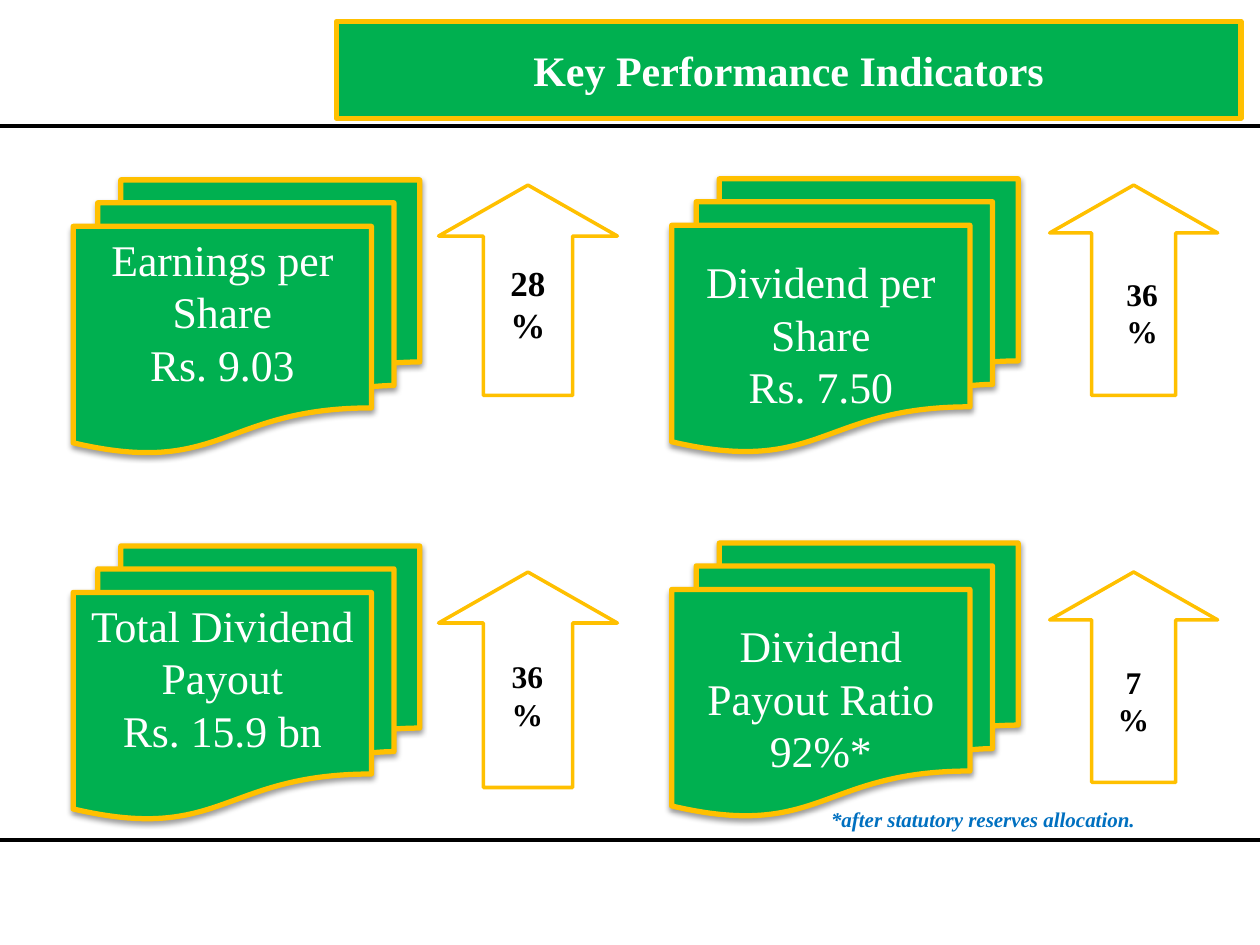
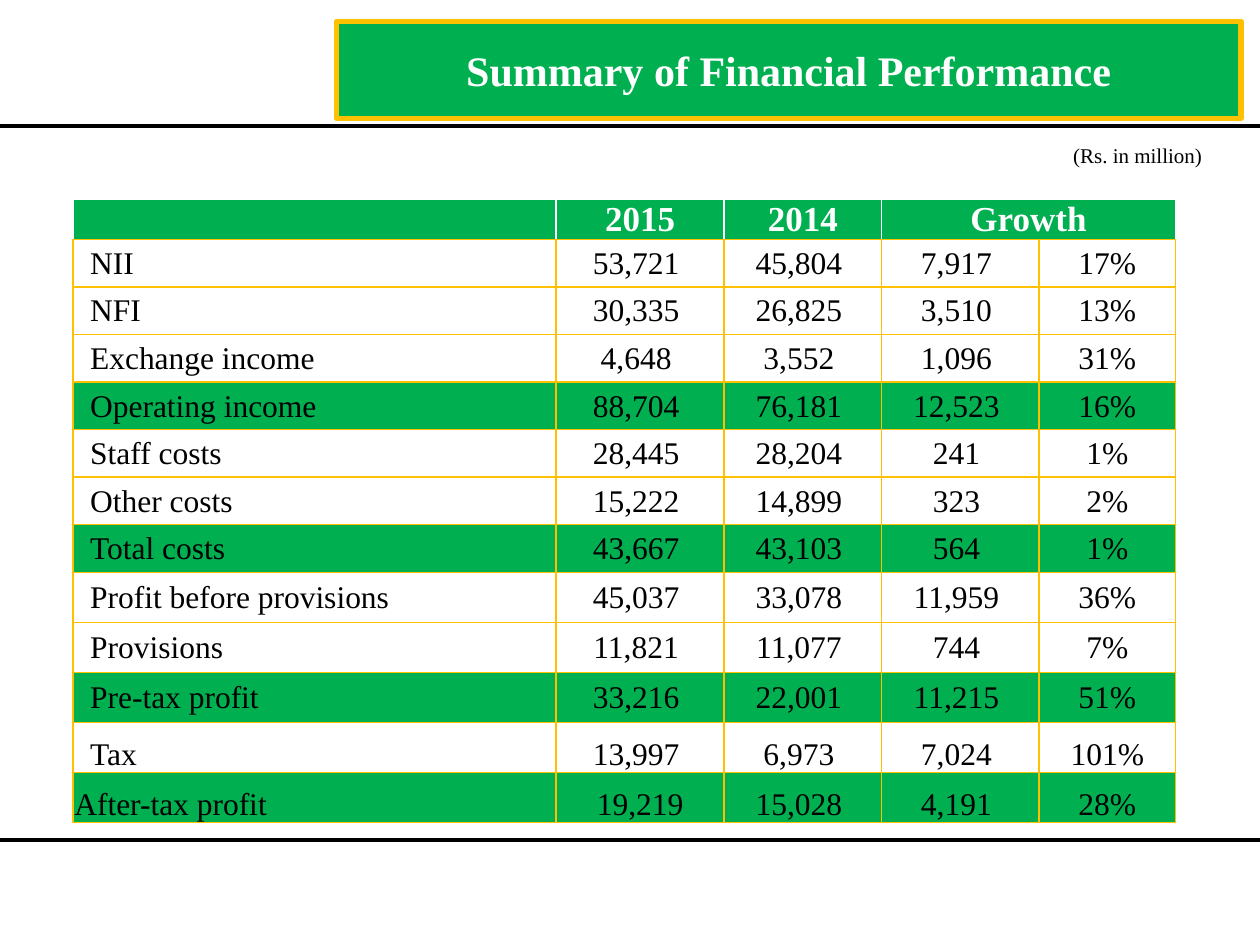
from dataclasses import dataclass
from typing import Any, Optional

from lxml.etree import SubElement
from pptx import Presentation
from pptx.dml.color import RGBColor
from pptx.enum.shapes import MSO_CONNECTOR as Connector, MSO_SHAPE as Shape
from pptx.enum.text import MSO_ANCHOR as Anchor, MSO_AUTO_SIZE as AutoSize, PP_ALIGN as Align
from pptx.oxml.ns import qn
from pptx.util import Pt

# Shared look
GREEN = RGBColor(0x00, 0xB0, 0x50)
GOLD = RGBColor(0xFF, 0xC0, 0x00)
WHITE = RGBColor(0xFF, 0xFF, 0xFF)
BLACK = RGBColor(0x00, 0x00, 0x00)
BLUE = RGBColor(0x00, 0x70, 0xC0)
FONT = "Times New Roman"
SLIDE_WIDTH, SLIDE_HEIGHT = 720, 540
RULE_HEIGHTS = (72, 480)
TITLE_BOX = (192.2, 12.2, 517, 55.4)
TITLE_ONLY = 5


@dataclass
class Box:
    left: float
    top: float
    width: float
    height: float

    def points(self) -> tuple:
        return tuple(Pt(v) for v in (self.left, self.top, self.width, self.height))


@dataclass
class Indicator:
    name: str
    value: str
    growth: str
    card: Box
    arrow: Box
    anchor: Any
    growth_box: Optional[Box] = None  # growth sits in the arrow when absent


@dataclass
class Row:
    label: str
    figures: tuple
    total: bool = False
    anchor: Any = Anchor.MIDDLE


LEFT_CARD, RIGHT_CARD, CARD_SIZE = 41.8, 383.8, (198, 156.2)
LEFT_ARROW, RIGHT_ARROW = 250.6, 599.8
TOP_ARROW, BOTTOM_ARROW = 105.8, 326.9

INDICATORS = [
    Indicator("Earnings per Share", "Rs. 9.03", "28%", Box(LEFT_CARD, 102.8, *CARD_SIZE),
              Box(LEFT_ARROW, TOP_ARROW, 102.2, 120.2), Anchor.TOP),
    Indicator("Dividend per Share", "Rs. 7.50", "36%", Box(RIGHT_CARD, 102.2, *CARD_SIZE),
              Box(RIGHT_ARROW, TOP_ARROW, 96, 120.2), Anchor.MIDDLE,
              Box(629.3, 153.4, 46.8, 28.8)),
    Indicator("Total Dividend Payout", "Rs. 15.9 bn", "36%", Box(LEFT_CARD, 312, *CARD_SIZE),
              Box(LEFT_ARROW, BOTTOM_ARROW, 102.2, 123.1), Anchor.TOP,
              Box(277.9, 372.2, 46.8, 28.8)),
    Indicator("Dividend Payout Ratio", "92%*", "7%", Box(RIGHT_CARD, 310.3, *CARD_SIZE),
              Box(RIGHT_ARROW, BOTTOM_ARROW, 96, 120.2), Anchor.MIDDLE,
              Box(628.6, 375.1, 38.2, 28.8)),
]

HEADINGS = ("", "2015", "2014", "Growth", "")
ROWS = [
    Row("NII", ("53,721", "45,804", "7,917", "17%")),
    Row("NFI", ("30,335", "26,825", "3,510", "13%")),
    Row("Exchange income", ("4,648", "3,552", "1,096", "31%")),
    Row("Operating income", ("88,704", "76,181", "12,523", "16%"), total=True),
    Row("Staff costs", ("28,445", "28,204", "241", "1%")),
    Row("Other costs", ("15,222", "14,899", "323", "2%")),
    Row("Total costs", ("43,667", "43,103", "564", "1%"), total=True),
    Row("Profit before provisions", ("45,037", "33,078", "11,959", "36%")),
    Row("Provisions", ("11,821", "11,077", "744", "7%")),
    Row("Pre-tax profit", ("33,216", "22,001", "11,215", "51%"), total=True),
    Row("Tax", ("13,997", "6,973", "7,024", "101%"), anchor=Anchor.BOTTOM),
    Row("After-tax profit", ("19,219", "15,028", "4,191", "28%"), True, Anchor.BOTTOM),
]
COLUMN_WIDTHS = (276, 96, 90, 90, 78)
ROW_HEIGHTS = (21, *[27.2] * 7, *[28.6] * 5)


def apply(target: Any, formats: dict) -> None:
    for key, value in formats.items():
        setattr(target, key, value)


def write(frame: Any, lines: list, size: float, color: RGBColor, align: Any = Align.CENTER,
          **font_formats: Any) -> None:
    frame.text = "\n".join(lines)
    for paragraph in frame.paragraphs:
        paragraph.alignment = align
        apply(paragraph.font, {"name": FONT, "size": Pt(size), **font_formats})
        paragraph.font.color.rgb = color


def outline(shape: Any, width: float, filled: bool = True) -> None:
    if filled:
        shape.fill.solid()
        shape.fill.fore_color.rgb = GREEN
    else:
        shape.fill.background()
    shape.line.color.rgb = GOLD
    shape.line.width = Pt(width)


def add_text(slide: Any, box: Box, text: str, size: float, color: RGBColor,
             anchor: Any = Anchor.TOP, **formats: Any) -> None:
    frame = slide.shapes.add_textbox(*box.points()).text_frame
    apply(frame, {"word_wrap": True, "vertical_anchor": anchor})
    write(frame, [text], size, color, **formats)


def add_shadow(shape: Any) -> None:
    effects = SubElement(shape._element.spPr, qn("a:effectLst"))
    shadow = SubElement(effects, qn("a:outerShdw"), blurRad=str(Pt(3.1)), dist=str(Pt(1.6)),
                        dir="5400000", rotWithShape="0")
    tint = SubElement(shadow, qn("a:srgbClr"), val=str(BLACK))
    SubElement(tint, qn("a:alpha"), val="38000")


def add_framed_slide(deck: Any, heading: str) -> Any:
    slide = deck.slides.add_slide(deck.slide_layouts[TITLE_ONLY])
    # Black rules above and below the content
    for height in RULE_HEIGHTS:
        rule = slide.shapes.add_connector(Connector.STRAIGHT, 0, Pt(height),
                                          Pt(SLIDE_WIDTH), Pt(height))
        rule.line.color.rgb = BLACK
        rule.line.width = Pt(2.5)
        SubElement(rule._element.spPr, qn("a:effectLst"))
    # Title band
    title = slide.shapes.title
    apply(title, dict(zip(("left", "top", "width", "height"), Box(*TITLE_BOX).points())))
    outline(title, 3)
    apply(title.text_frame, {"vertical_anchor": Anchor.MIDDLE, "auto_size": AutoSize.NONE})
    write(title.text_frame, [heading], 24, WHITE, bold=True)
    return slide


def add_indicator(slide: Any, item: Indicator) -> None:
    card = slide.shapes.add_shape(Shape.FLOWCHART_MULTIDOCUMENT, *item.card.points())
    outline(card, 3)
    add_shadow(card)
    card.text_frame.vertical_anchor = item.anchor
    write(card.text_frame, [item.name, item.value], 25, WHITE)

    arrow = slide.shapes.add_shape(Shape.UP_ARROW, *item.arrow.points())
    arrow.adjustments[1] = 0.285
    arrow.shadow.inherit = False
    outline(arrow, 2, filled=False)
    if item.growth_box:
        add_text(slide, item.growth_box, item.growth, 18, BLACK, bold=True)
    else:
        arrow.text_frame.vertical_anchor = Anchor.MIDDLE
        write(arrow.text_frame, [item.growth], 20, BLACK, bold=True)


def border_cell(cell: Any, colors: dict) -> None:
    properties = cell._tc.get_or_add_tcPr()
    for position, (side, color) in enumerate(colors.items()):
        line = properties.makeelement(qn(f"a:{side}"), {"w": str(Pt(1))})
        fill = SubElement(line, qn("a:solidFill"))
        SubElement(fill, qn("a:srgbClr"), val=str(color))
        properties.insert(position, line)


def format_cell(cell: Any, green: bool, anchor: Any, left: float, right: float,
                edge: RGBColor) -> None:
    apply(cell, {"vertical_anchor": anchor, "margin_left": Pt(left), "margin_right": Pt(right),
                 "margin_top": Pt(0.7), "margin_bottom": 0})
    if green:
        cell.fill.solid()
        cell.fill.fore_color.rgb = GREEN
    else:
        cell.fill.background()
    border_cell(cell, {"lnL": edge, "lnR": edge, "lnT": edge, "lnB": GOLD})


def add_results_table(slide: Any) -> None:
    box = Box(41.8, 113.8, sum(COLUMN_WIDTHS), sum(ROW_HEIGHTS))
    table = slide.shapes.add_table(len(ROW_HEIGHTS), len(COLUMN_WIDTHS), *box.points()).table
    apply(table, {"first_row": False, "horz_banding": False})
    for column, width in zip(table.columns, COLUMN_WIDTHS):
        column.width = Pt(width)
    for line, height in zip(table.rows, ROW_HEIGHTS):
        line.height = Pt(height)

    # Header, with Growth over the last two columns
    table.cell(0, 3).merge(table.cell(0, 4))
    for c, heading in enumerate(HEADINGS):
        cell = table.cell(0, c)
        format_cell(cell, True, Anchor.MIDDLE, 0.7, 0.7, WHITE)
        if not cell.is_spanned:
            write(cell.text_frame, [heading], 20, WHITE, bold=True)

    # Results: amounts sit slightly left of centre, the last row is not indented
    for r, row in enumerate(ROWS, start=1):
        last_row = r == len(ROWS)
        for c, text in enumerate((row.label, *row.figures)):
            left = 9.7 if c == 0 and not last_row else 0.7
            if last_row and c == 1:
                left = 5.2
            right = 5.2 if c in (1, 2, 3) else 0.7
            cell = table.cell(r, c)
            format_cell(cell, row.total, row.anchor, left, right, GOLD)
            write(cell.text_frame, [text], 18, BLACK,
                  Align.LEFT if c == 0 else Align.CENTER, bold=False)


def main() -> None:
    deck = Presentation()
    apply(deck, {"slide_width": Pt(SLIDE_WIDTH), "slide_height": Pt(SLIDE_HEIGHT)})

    # Key indicators
    indicators = add_framed_slide(deck, "Key Performance Indicators")
    for item in INDICATORS:
        add_indicator(indicators, item)
    add_text(indicators, Box(447.8, 453.6, 228.2, 28.8), "*after statutory reserves allocation.",
             12, BLUE, Anchor.MIDDLE, bold=True, italic=True)

    # Financial summary
    summary = add_framed_slide(deck, "Summary of Financial Performance")
    add_results_table(summary)
    add_text(summary, Box(606.2, 77.8, 90, 21.6), "(Rs. in million)", 12, BLACK, align=Align.LEFT)

    deck.save("out.pptx")


if __name__ == "__main__":
    main()
